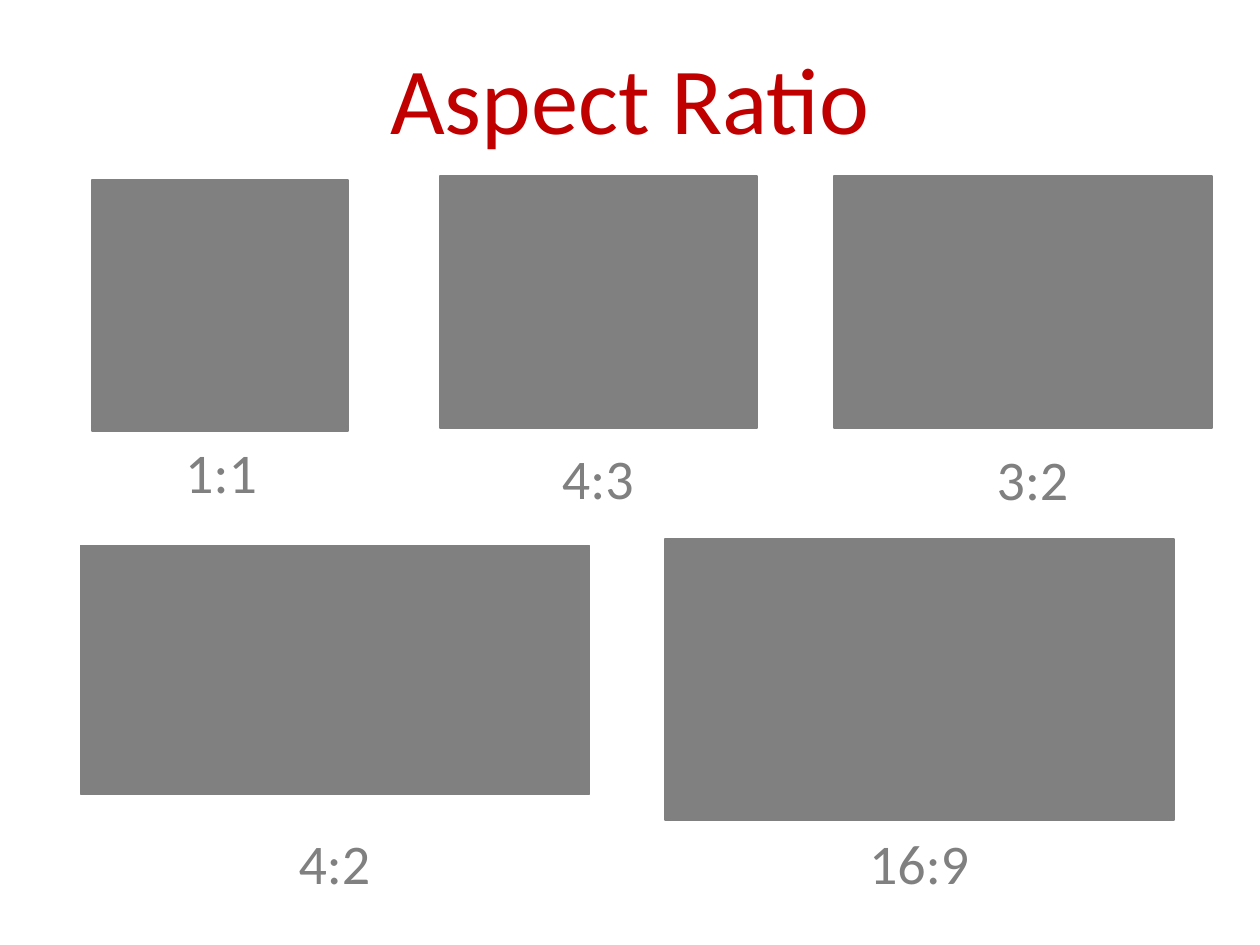
from pptx import Presentation
from pptx.dml.color import RGBColor
from pptx.enum.text import MSO_ANCHOR, MSO_AUTO_SIZE, PP_ALIGN
from pptx.enum.shapes import MSO_SHAPE
from pptx.util import Inches, Pt

RED = RGBColor(0xC0, 0x00, 0x00)
GRAY = RGBColor(0x80, 0x80, 0x80)
CENTER = PP_ALIGN.CENTER
BOTTOM = MSO_ANCHOR.BOTTOM
FIT_SHAPE = MSO_AUTO_SIZE.SHAPE_TO_FIT_TEXT
NO_FIT = MSO_AUTO_SIZE.NONE
RECTANGLE = MSO_SHAPE.RECTANGLE
TITLE_ONLY = 5

LABEL_WIDTH, LABEL_HEIGHT = 4.25, 0.64

# Ratio, frame (left, top, width, height), label (left, top)
RATIOS = [
    ("1:1", (0.73, 1.43, 2.03, 1.99), (-0.37, 3.42)),
    ("4:3", (3.49, 1.4, 2.52, 2), (2.62, 3.47)),
    ("3:2", (6.62, 1.4, 3, 2), (6.07, 3.48)),
    ("4:2", (0.64, 4.33, 4.04, 1.97), (0.53, 6.53)),
    ("16:9", (5.28, 4.28, 4.04, 2.23), (5.17, 6.53)),
]


class RatioSlide:
    font_name = "Calibri"

    def __init__(self, deck):
        self.page = deck.slides.add_slide(deck.slide_layouts[TITLE_ONLY])

    def set_text(self, box, text, size, color):
        box.text_frame.word_wrap = True
        para = box.text_frame.paragraphs[0]
        para.text = text
        para.alignment = CENTER
        font = para.runs[0].font
        font.name = self.font_name
        font.size = Pt(size)
        font.color.rgb = color
        return para

    def title(self, text, left, top, width, height):
        box = self.page.shapes.title
        box.left, box.top = Inches(left), Inches(top)
        box.width, box.height = Inches(width), Inches(height)
        box.text_frame.vertical_anchor = BOTTOM
        box.text_frame.auto_size = NO_FIT
        para = self.set_text(box, text, 54, RED)
        para.line_spacing = 0.9

    def frame(self, left, top, width, height):
        box = self.page.shapes.add_shape(
            RECTANGLE, Inches(left), Inches(top), Inches(width), Inches(height))
        box.shadow.inherit = False
        box.fill.solid()
        box.fill.fore_color.rgb = GRAY
        box.line.color.rgb = GRAY
        box.line.width = Pt(1)

    def label(self, text, left, top):
        box = self.page.shapes.add_textbox(
            Inches(left), Inches(top), Inches(LABEL_WIDTH), Inches(LABEL_HEIGHT))
        box.text_frame.auto_size = FIT_SHAPE
        self.set_text(box, text, 32, GRAY)


def main():
    deck = Presentation()
    deck.slide_width, deck.slide_height = Inches(10), Inches(7.5)
    slide = RatioSlide(deck)

    # Title
    slide.title("Aspect Ratio", 0, 0.36, 10, 0.92)

    # Frames with their ratios below
    for ratio, frame, label in RATIOS:
        slide.frame(*frame)
        slide.label(ratio, *label)

    deck.save("out.pptx")


if __name__ == "__main__":
    main()
